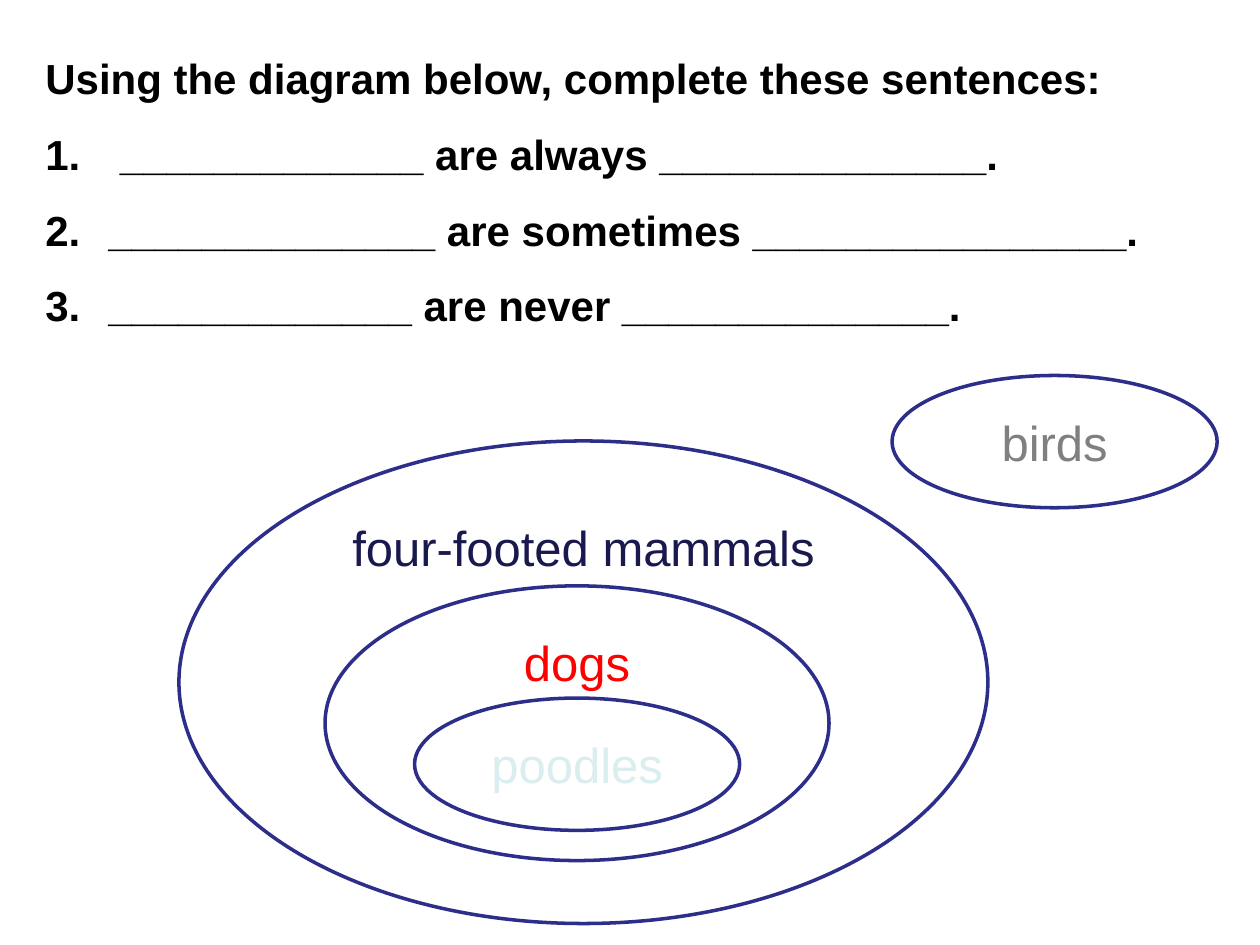
import pptx
import pptx.dml.color
import pptx.enum.shapes
import pptx.enum.text
import pptx.util
from lxml import etree
from pptx.util import Inches

DRAWING_NS = "http://schemas.openxmlformats.org/drawingml/2006/main"
TOP = pptx.enum.text.MSO_ANCHOR.TOP
MIDDLE = pptx.enum.text.MSO_ANCHOR.MIDDLE
LEFT = pptx.enum.text.PP_ALIGN.LEFT
CENTER = pptx.enum.text.PP_ALIGN.CENTER


def color(value):
    return pptx.dml.color.RGBColor.from_string(value)


class DiagramSlide:
    font_name = "Arial"
    outline = "2D2D8A"
    paper = "FFFFFF"
    ink = "000000"
    sentence_size = 24
    label_size = 28

    def __init__(self, slide):
        self.slide = slide

    def style(self, paragraph, size, ink, bold, alignment):
        paragraph.alignment = alignment
        paragraph.font.name = self.font_name
        paragraph.font.size = pptx.util.Pt(size)
        paragraph.font.bold = bold
        paragraph.font.color.rgb = color(ink)

    def fill_placeholder(self, placeholder, lines, left, top, width, height):
        placeholder.left, placeholder.top = Inches(left), Inches(top)
        placeholder.width, placeholder.height = Inches(width), Inches(height)
        frame = placeholder.text_frame
        frame.auto_size = pptx.enum.text.MSO_AUTO_SIZE.NONE
        frame.vertical_anchor = TOP
        frame.word_wrap = True
        frame.text = "\n".join(lines)
        for paragraph in frame.paragraphs:
            paragraph.line_spacing = 1.5
            paragraph.space_before = pptx.util.Pt(0)
            self.style(paragraph, self.sentence_size, self.ink, True, LEFT)
        return frame

    def heading(self, text, *box):
        self.fill_placeholder(self.slide.shapes.title, [text], *box)

    def numbered_list(self, sentences, *box):
        frame = self.fill_placeholder(self.slide.placeholders[1], sentences, *box)
        for paragraph in frame.paragraphs:
            properties = paragraph.font._element.getparent()
            properties.set("marL", str(Inches(0.5)))
            properties.set("indent", str(Inches(-0.5)))
            number = etree.Element(f"{{{DRAWING_NS}}}buAutoNum", type="arabicPeriod")
            paragraph.font._element.addprevious(number)

    def category(self, label, ink, anchor, left, top, width, height):
        oval = self.slide.shapes.add_shape(
            pptx.enum.shapes.MSO_SHAPE.OVAL,
            Inches(left), Inches(top), Inches(width), Inches(height))
        oval.shadow.inherit = False
        oval.fill.solid()
        oval.fill.fore_color.rgb = color(self.paper)
        oval.line.color.rgb = color(self.outline)
        oval.line.width = pptx.util.Pt(2)
        frame = oval.text_frame
        frame.word_wrap = True
        frame.vertical_anchor = anchor
        frame.text = label
        self.style(frame.paragraphs[0], self.label_size, ink, False, CENTER)


def main():
    presentation = pptx.Presentation()
    presentation.slide_width = Inches(10)
    presentation.slide_height = Inches(7.5)
    diagram = DiagramSlide(
        presentation.slides.add_slide(presentation.slide_layouts[1]))

    diagram.heading("Using the diagram below, complete these sentences:",
                    0.26, 0.17, 8.97, 0.7)
    diagram.numbered_list([
        " _____________ are always ______________.",
        "______________ are sometimes ________________.",
        "_____________ are never ______________.",
    ], 0.26, 0.77, 8.97, 2)

    categories = [
        ("four-footed mammals", "19194D", TOP, 1.42, 3.5, 6.42, 3.83),
        ("dogs", "FF0000", TOP, 2.58, 4.65, 4, 2.18),
        ("poodles", "DAEDEF", MIDDLE, 3.29, 5.54, 2.58, 1.05),
        ("birds", "808080", MIDDLE, 7.08, 2.98, 2.58, 1.05),
    ]
    for category in categories:
        diagram.category(*category)

    presentation.save("out.pptx")


if __name__ == "__main__":
    main()
